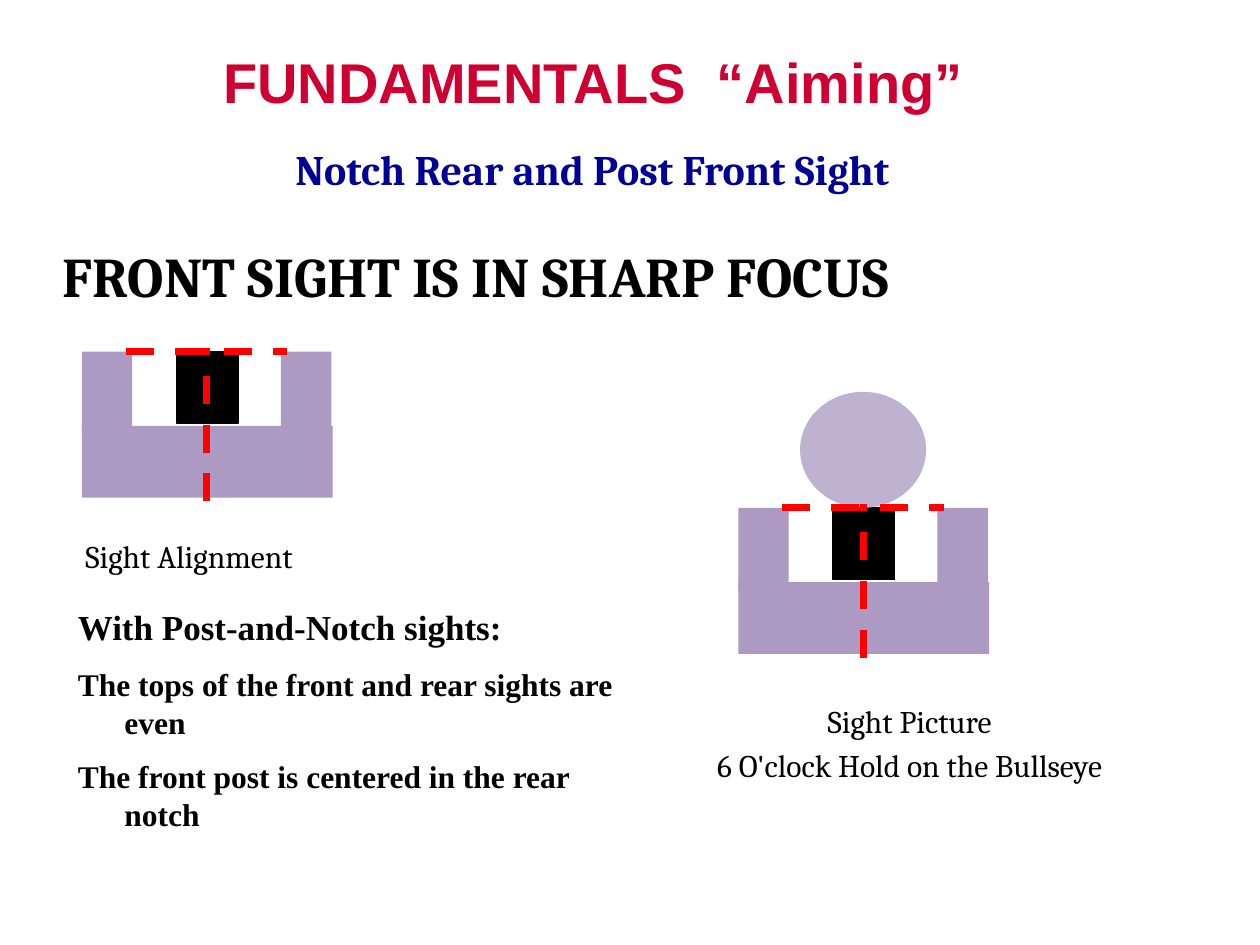
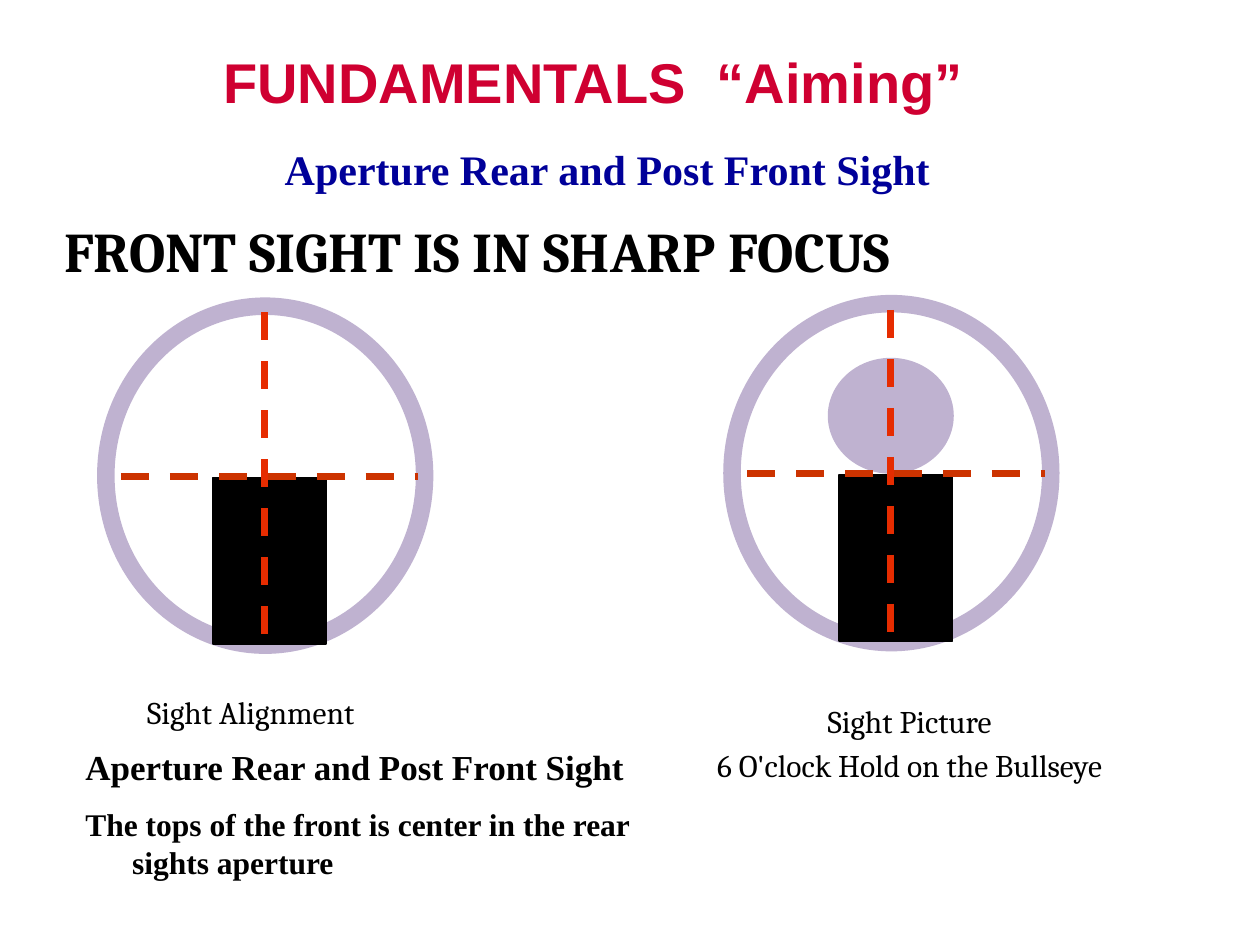
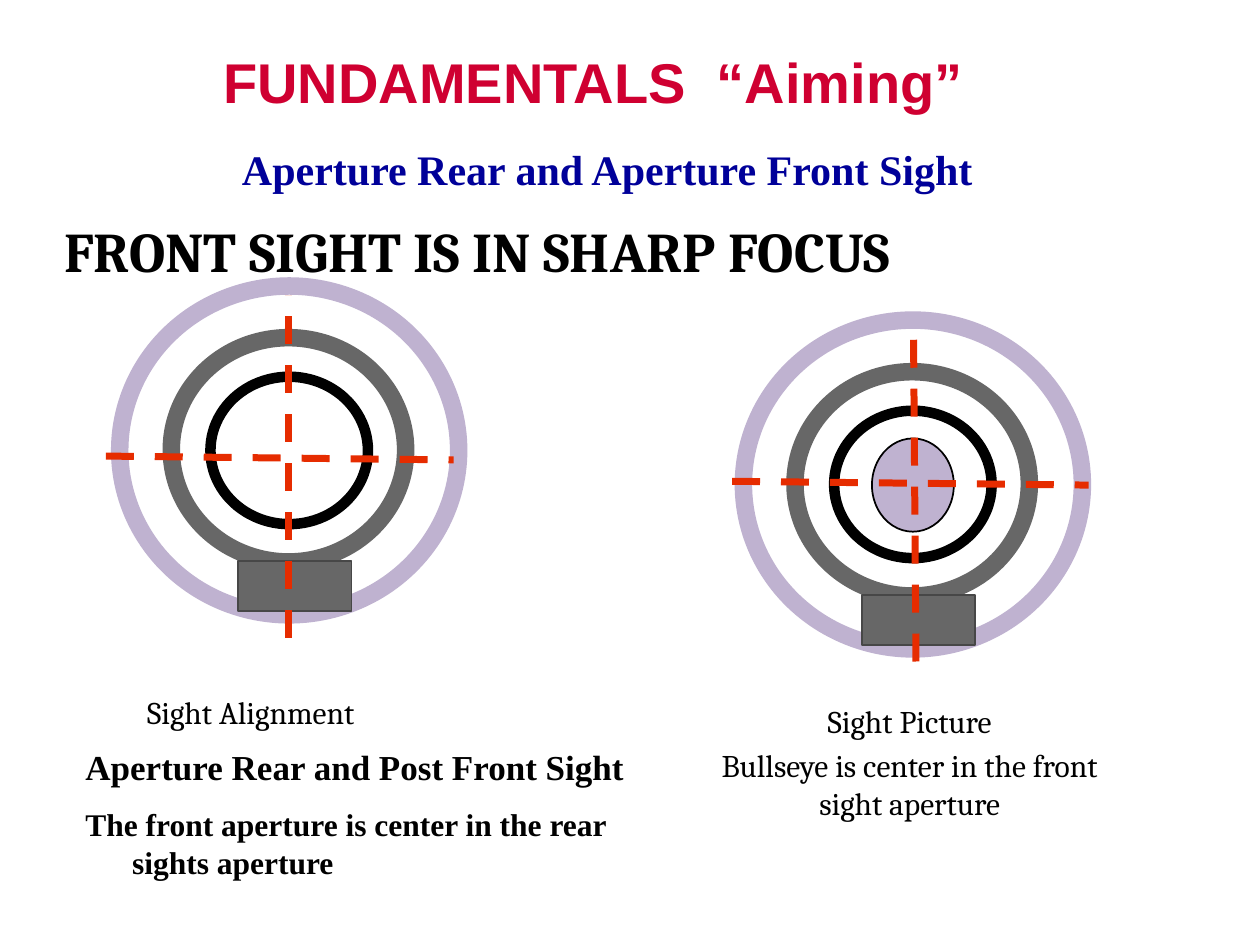
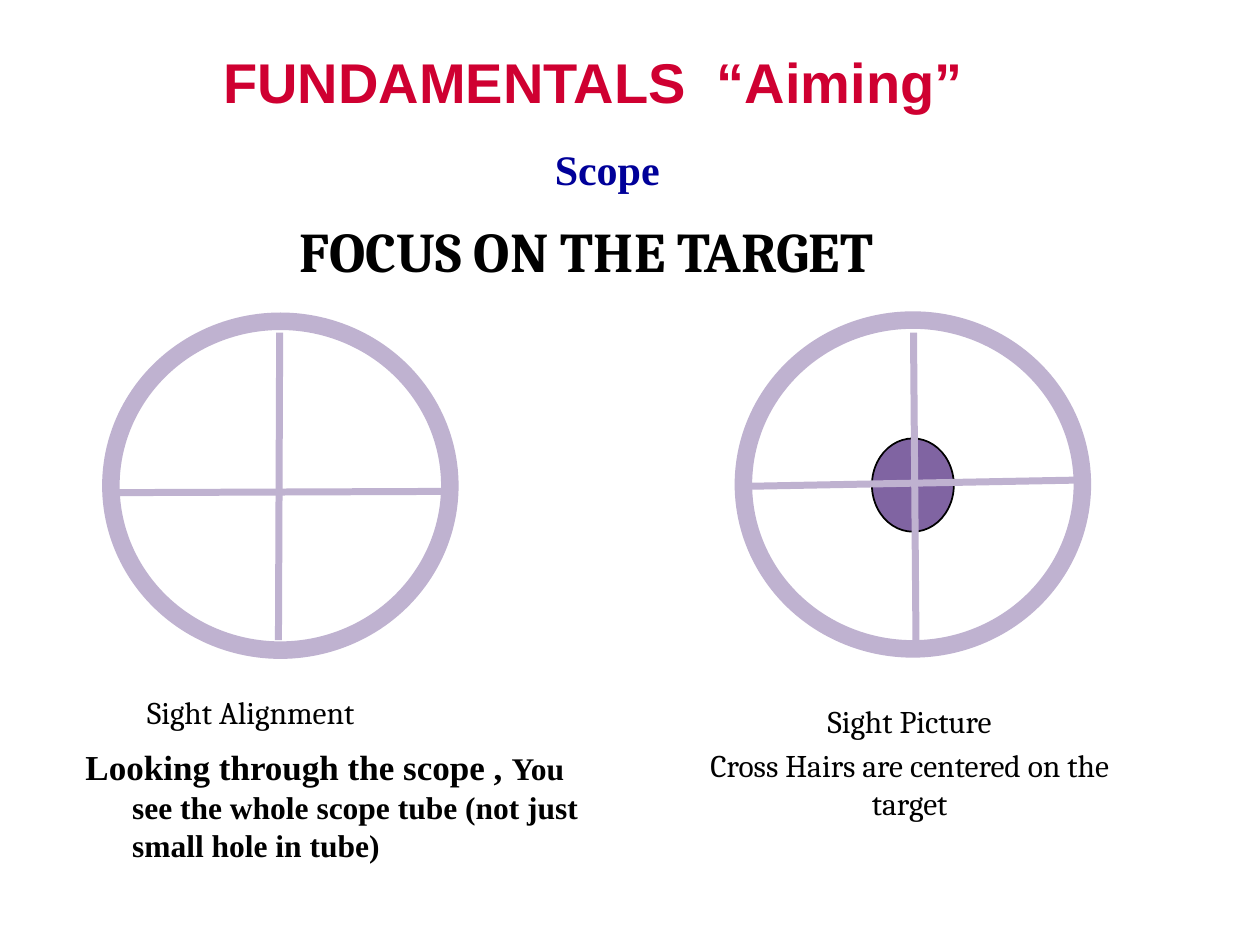
import lxml.etree
import pptx
import pptx.dml.color
import pptx.enum.dml
import pptx.enum.shapes
import pptx.enum.text
import pptx.oxml.ns
import pptx.util

Inches = pptx.util.Inches
Pt = pptx.util.Pt
Shape = pptx.enum.shapes.MSO_SHAPE
Align = pptx.enum.text.PP_ALIGN
Anchor = pptx.enum.text.MSO_ANCHOR

BLACK, WHITE = "000000", "FFFFFF"
CRIMSON, NAVY = "CF0031", "000099"
RED, ORANGE, RUST = "FF0000", "E62C00", "CC3300"
LILAC, MAUVE, PURPLE = "BFB2D0", "AC9AC3", "8064A2"
GRAY, DARK_GRAY = "676767", "474747"

TITLE = {"name": "Arial", "size": Pt(32), "bold": True}
SUBTITLE = {"name": "Times New Roman", "size": Pt(24), "bold": True}
HEADLINE = {"name": "Cambria", "size": Pt(32), "bold": True}
CAPTION = {"name": "Cambria", "size": Pt(18), "bold": False}
NOTE_LEAD = {"name": "Times New Roman", "size": Pt(20), "bold": True}
NOTE = {**NOTE_LEAD, "size": Pt(18)}


def color(value):
    return pptx.dml.color.RGBColor.from_string(value)


class AimingDeck:
    def __init__(self):
        self.deck = pptx.Presentation()
        self.deck.slide_width = Inches(10)
        self.deck.slide_height = Inches(7.5)
        self.page = None

    def start_page(self, subtitle, headline, subtitle_left=0.66, subtitle_font="Times New Roman",
                   headline_at=(0.41, 1.67), headline_align=Align.LEFT):
        self.page = self.deck.slides.add_slide(self.deck.slide_layouts[6])
        self.text((0.5, 0.04, 8.42, 1.21), [[("FUNDAMENTALS  “Aiming”", TITLE)]],
                  CRIMSON, align=Align.CENTER, anchor=Anchor.MIDDLE)
        self.text((subtitle_left, 1.09, 8.32, 0.5),
                  [[(subtitle, {**SUBTITLE, "name": subtitle_font})]],
                  NAVY, align=Align.CENTER)
        self.text((*headline_at, 8.59, 0.64), [[(headline, HEADLINE)]], align=headline_align)

    def text(self, place, paragraphs, ink=BLACK, align=Align.LEFT, anchor=Anchor.TOP,
             wrap=True, margin=0, indent=0, before=0, after_ratio=0):
        box = self.page.shapes.add_textbox(*map(Inches, place))
        frame = box.text_frame
        frame.word_wrap = wrap
        frame.vertical_anchor = anchor
        for index, spans in enumerate(paragraphs):
            para = frame.paragraphs[0] if index == 0 else frame.add_paragraph()
            properties = para._p.get_or_add_pPr()
            properties.set("marL", str(Inches(margin)))
            properties.set("indent", str(Inches(indent)))
            para.alignment = align
            para.space_before = Pt(before if index else 0)
            para.space_after = int(spans[0][1]["size"] * after_ratio)
            for words, style in spans:
                span = para.add_run()
                span.text = words
                for name, value in style.items():
                    setattr(span.font, name, value)
                span.font.color.rgb = color(ink)

    def alignment_caption(self, left=1.07, top=5.45):
        self.text((left, top, 2.05, 0.4), [[("Sight Alignment", CAPTION)]], wrap=False)

    def picture_caption(self, detail):
        self.text((4.89, 5.52, 4.16, 1.13), [[("Sight Picture", CAPTION)], [(detail, CAPTION)]],
                  align=Align.CENTER, margin=0.5, before=3.6)

    def notes(self, place, paragraphs):
        self.text(place, paragraphs, margin=0.63, indent=-0.37, after_ratio=0.5)

    def shape(self, kind, place, fill, line=None, width=1):
        shape = self.page.shapes.add_shape(kind, *map(Inches, place))
        shape.shadow.inherit = False
        shape.fill.solid()
        shape.fill.fore_color.rgb = color(fill)
        if line:
            shape.line.color.rgb = color(line)
            shape.line.width = Pt(width)
        else:
            shape.line.fill.background()

    def rectangle(self, place, fill, line=None):
        self.shape(Shape.RECTANGLE, place, fill, line)

    def disc(self, place, fill=LILAC, line=None):
        self.shape(Shape.OVAL, place, fill, line)

    def ring(self, place, line=LILAC, width=10):
        self.shape(Shape.OVAL, place, WHITE, line, width)

    def line(self, ends, ink, dashed=True):
        line = self.page.shapes.add_connector(
            pptx.enum.shapes.MSO_CONNECTOR.STRAIGHT, *map(Inches, ends))
        line.line.color.rgb = color(ink)
        line.line.width = Pt(4)
        if dashed:
            line.line.dash_style = pptx.enum.dml.MSO_LINE.DASH
        lxml.etree.SubElement(line._element.spPr, pptx.oxml.ns.qn("a:effectLst"))

    def notch_sight(self, left, top, bullseye=False):
        self.rectangle((left, top + 0.59, 1.99, 0.57), MAUVE)
        for offset in (0, 1.58):
            self.rectangle((left + offset, top, 0.4, 0.65), MAUVE)
        self.rectangle((left + 0.75, top, 0.49, 0.57), BLACK, BLACK)
        if bullseye:
            self.disc((left + 0.49, top - 0.92, 1, 0.92))
        self.line((left + 0.35, top, left + 1.63, top), RED)
        self.line((left + 0.99, top + 1.19, left + 0.99, top - 0.03), RED)

    def post_sight(self, left, top, bullseye=False):
        self.ring((left, top, 2.53, 2.69))
        if bullseye:
            self.disc((left + 0.76, top + 0.43, 1, 0.92))
        self.rectangle((left + 0.85, top + 1.36, 0.9, 1.32), BLACK, BLACK)
        self.line((left + 0.12, top + 1.35, left + 2.48, top + 1.35), RUST)
        self.line((left + 1.26, top + 0.05, left + 1.26, top + 2.74), ORANGE)

    def aperture_sight(self, left, top, hairs, bullseye=False):
        self.ring((left, top, 2.69, 2.61))
        self.ring((left + 0.41, top + 0.41, 1.86, 1.78), GRAY)
        self.ring((left + 0.72, top + 0.72, 1.25, 1.17), BLACK, 6)
        self.rectangle((left + 0.94, top + 2.18, 0.9, 0.4), GRAY, DARK_GRAY)
        if bullseye:
            self.disc((left + 1.02, top + 0.94, 0.65, 0.74), LILAC, BLACK)
        for ends in hairs:
            self.line(ends, ORANGE)

    def scope(self, left, top, hairs, bullseye=False):
        self.ring((left, top, 2.69, 2.61))
        if bullseye:
            self.disc((left + 1.02, top + 0.94, 0.65, 0.74), PURPLE, BLACK)
        for ends in hairs:
            self.line(ends, LILAC, dashed=False)


def notch_page(aiming):
    aiming.start_page("Notch Rear and Post Front Sight", "FRONT SIGHT IS IN SHARP FOCUS",
                      subtitle_left=0.54, subtitle_font="Cambria", headline_at=(0.4, 1.87))
    aiming.notch_sight(0.65, 2.79)
    aiming.notch_sight(5.86, 4.03, bullseye=True)
    aiming.alignment_caption(0.58, 4.21)
    aiming.picture_caption("6 O'clock Hold on the Bullseye")
    aiming.notes((0.26, 4.76, 5, 1.97), [
        [("With Post-and-Notch sights:", NOTE_LEAD)],
        [("The tops of the front and rear sights are even", NOTE)],
        [("The front post is centered in the rear notch", NOTE)]])


def post_page(aiming):
    aiming.start_page("Aperture Rear and Post Front Sight", "FRONT SIGHT IS IN SHARP FOCUS")
    aiming.alignment_caption()
    aiming.picture_caption("6 O'clock Hold on the Bullseye")
    aiming.post_sight(0.84, 2.43)
    aiming.post_sight(5.81, 2.41, bullseye=True)
    aiming.notes((0.32, 5.87, 5, 1.21), [
        [("Aperture Rear and Post Front Sight", NOTE_LEAD)],
        [("The tops of the front is center in the rear sights aperture", NOTE)]])


def aperture_page(aiming):
    aiming.start_page("Aperture Rear and Aperture Front Sight", "FRONT SIGHT IS IN SHARP FOCUS")
    aiming.alignment_caption()
    aiming.picture_caption("Bullseye is center in the front sight aperture")
    aiming.notes((0.32, 5.87, 5, 1.21), [
        [("Aperture Rear and Post Front Sight", NOTE_LEAD)],
        [("The front aperture is center in the rear sights aperture", NOTE)]])
    aiming.aperture_sight(0.95, 2.27, [(2.29, 5.06, 2.29, 2.34), (0.84, 3.62, 3.6, 3.65)])
    aiming.aperture_sight(5.9, 2.54, [(7.27, 5.25, 7.25, 2.61), (5.81, 3.82, 8.64, 3.85)],
                          bullseye=True)


def scope_page(aiming):
    aiming.start_page("Scope", "FOCUS ON THE TARGET", headline_at=(0.36, 1.67),
                      headline_align=Align.CENTER)
    aiming.alignment_caption()
    aiming.picture_caption("Cross Hairs are centered on the target")
    aiming.notes((0.32, 5.87, 4.52, 1.04), [
        [("Looking through the scope , ", NOTE_LEAD),
         ("You see the whole scope tube (not just small hole in tube)", NOTE)]])
    aiming.scope(0.88, 2.55, [(2.21, 5.08, 2.22, 2.64), (0.93, 3.91, 3.52, 3.9)])
    aiming.scope(5.9, 2.54, [(5.92, 3.86, 8.57, 3.81), (7.27, 5.08, 7.25, 2.64)],
                 bullseye=True)


def main():
    aiming = AimingDeck()
    for build_page in (notch_page, post_page, aperture_page, scope_page):
        build_page(aiming)
    aiming.deck.save("out.pptx")


if __name__ == "__main__":
    main()
